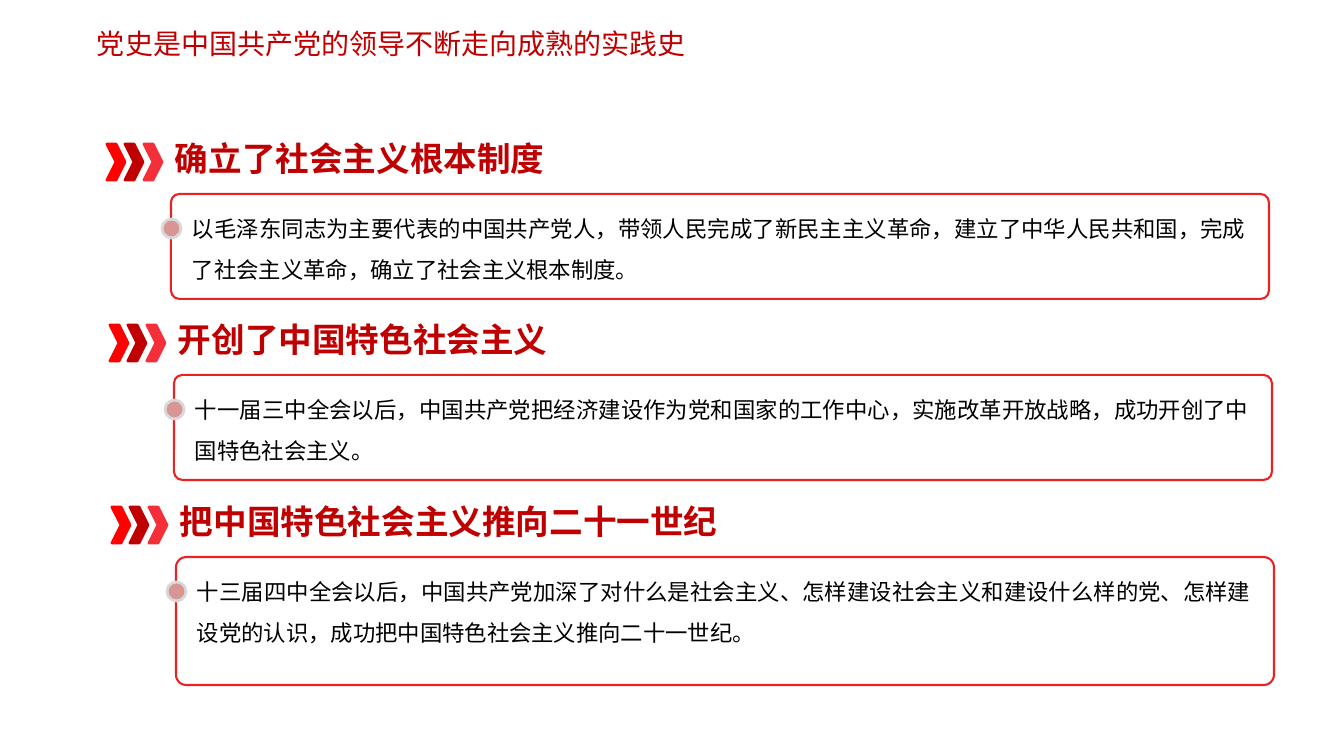
import pptx
import pptx.util
import pptx.dml.color
import pptx.enum.shapes
import pptx.enum.text
import pptx.oxml.ns
import lxml.etree

SHAPE = pptx.enum.shapes.MSO_SHAPE
JUSTIFY = pptx.enum.text.PP_ALIGN.JUSTIFY
LEFT = pptx.enum.text.PP_ALIGN.LEFT
FONT = "Noto Sans CJK SC"
RED = "C00000"
CHEVRON_COLOURS = ["FF0000", RED, "F42F39"]

SECTIONS = [
    ((162, 131, 1107, 168), 484, "确立了社会主义根本制度",
     "以毛泽东同志为主要代表的中国共产党人，带领人民完成了新民主主义革命，建立了中华人民共和国，"
     "完成了社会主义革命，确立了社会主义根本制度。"),
    ((165, 312, 1107, 168), 484, "开创了中国特色社会主义",
     "十一届三中全会以后，中国共产党把经济建设作为党和国家的工作中心，实施改革开放战略，"
     "成功开创了中国特色社会主义。"),
    ((167, 494, 1107, 191), 666, "把中国特色社会主义推向二十一世纪",
     "十三届四中全会以后，中国共产党加深了对什么是社会主义、怎样建设社会主义和建设什么样的党、"
     "怎样建设党的认识，成功把中国特色社会主义推向二十一世纪。"),
]


def px(n):
    return pptx.util.Emu(round(n * 914400 / 100.8))


def colour(value):
    return pptx.dml.color.RGBColor.from_string(value)


def write(sp, text, size, value, bold=False, align=LEFT, spacing=1.0, insets=(10, 5)):
    tf = sp.text_frame
    tf.word_wrap = True
    tf.auto_size = pptx.enum.text.MSO_AUTO_SIZE.NONE
    tf.vertical_anchor = pptx.enum.text.MSO_ANCHOR.TOP
    tf.margin_left = tf.margin_right = px(insets[0])
    tf.margin_top = tf.margin_bottom = px(insets[1])
    p = tf.paragraphs[0]
    p.alignment = align
    p.line_spacing = spacing
    r = p.add_run()
    r.text = text
    r.font.size = pptx.util.Pt(size)
    r.font.bold = bold
    r.font.color.rgb = colour(value)
    r.font.name = FONT
    ea = lxml.etree.SubElement(r.font._element, pptx.oxml.ns.qn("a:ea"))
    ea.set("typeface", FONT)


def add_text(s, box, *args, **style):
    write(s.shapes.add_textbox(*map(px, box)), *args, **style)


def add_shape(s, kind, box, line, width, fill=None):
    sp = s.shapes.add_shape(kind, *map(px, box))
    sp.shadow.inherit = False
    if fill:
        sp.fill.solid()
        sp.fill.fore_color.rgb = colour(fill)
    else:
        sp.fill.background()
    sp.line.color.rgb = colour(line)
    sp.line.width = pptx.util.Pt(width)
    return sp


def add_title(s, box, text):
    sp = s.shapes.title
    sp.left, sp.top, sp.width, sp.height = map(px, box)
    write(sp, text, 20, RED, align=JUSTIFY)


def add_section(s, box, heading_width, heading, body):
    x, y, w, h = box
    for i, value in enumerate(CHEVRON_COLOURS):
        add_shape(s, SHAPE.CHEVRON, (x - 55 + 37 * i // 2, y + 13, 18, 36), value, 2, value)
    card = add_shape(s, SHAPE.ROUNDED_RECTANGLE, (x + 9, y + 63, w - 9, h - 63), "E92324", 1.5)
    card.adjustments[0] = 0.08
    add_shape(s, SHAPE.FLOWCHART_CONNECTOR, (x, y + 88, 19, 19), "D8D8D8", 2, "D99593")
    add_text(s, (x + 20, y + 66, w - 32, 92), body, 16, "000000", align=JUSTIFY, spacing=1.5)
    add_text(s, (x, y, heading_width, 54), heading, 24, RED, bold=True, insets=(13, 7))


def main():
    prs = pptx.Presentation()
    prs.slide_width, prs.slide_height = px(1344), px(756)
    s = prs.slides.add_slide(prs.slide_layouts[5])
    add_title(s, (87, 21, 660, 44), "党史是中国共产党的领导不断走向成熟的实践史")
    for section in SECTIONS:
        add_section(s, *section)
    prs.save("out.pptx")


if __name__ == "__main__":
    main()
